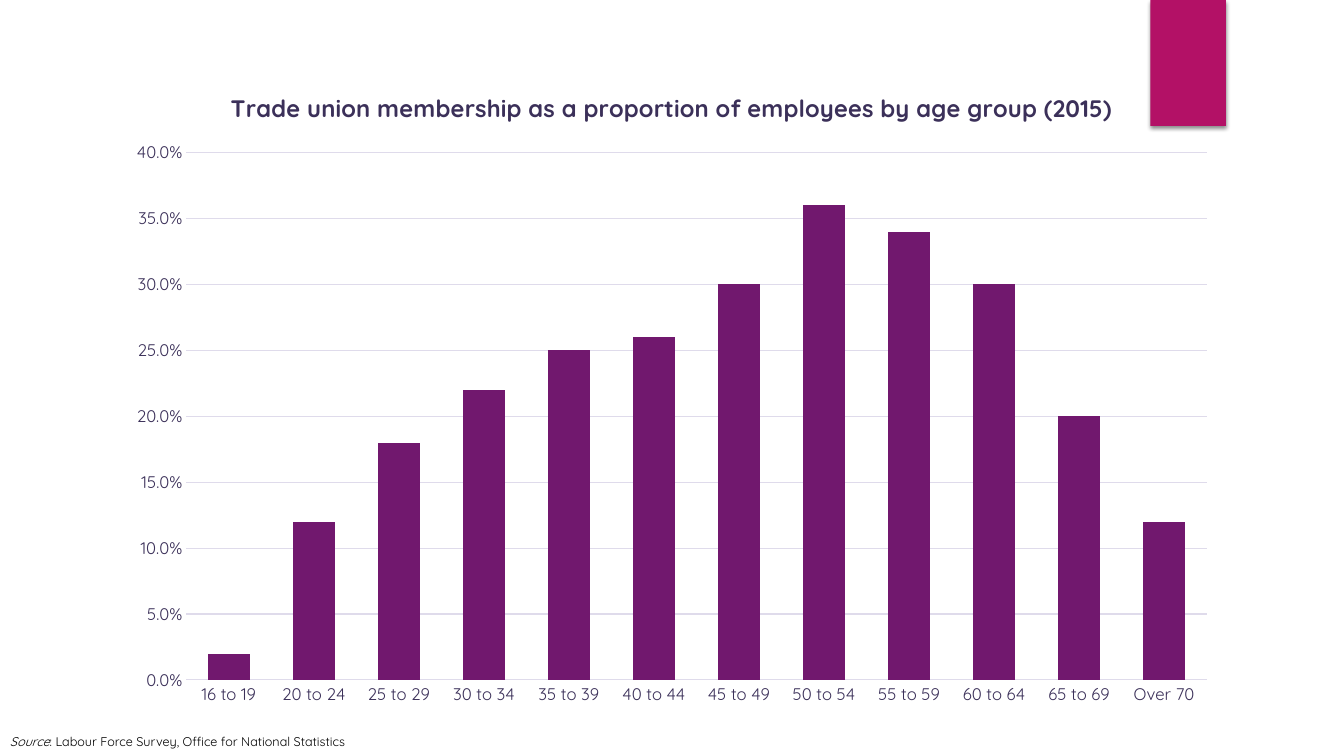
import lxml.etree
import pptx
import pptx.chart.data
import pptx.dml.color
import pptx.enum.chart
import pptx.enum.shapes
import pptx.enum.text
import pptx.oxml
import pptx.oxml.ns
import pptx.util

Inches = pptx.util.Inches
FONT = "Quicksand"
INK, GRID, BAR, ACCENT, BLACK = "3B3059", "DFDBEB", "71186E", "B31166", "000000"

TITLE = "Trade union membership as a proportion of employees by age group (2015)"
MEMBERSHIP = {
    "16 to 19": 0.02, "20 to 24": 0.12, "25 to 29": 0.18, "30 to 34": 0.22,
    "35 to 39": 0.25, "40 to 44": 0.26, "45 to 49": 0.3, "50 to 54": 0.36,
    "55 to 59": 0.34, "60 to 64": 0.3, "65 to 69": 0.2, "Over 70": 0.12,
}


def colour(hex_string):
    return pptx.dml.color.RGBColor.from_string(hex_string)


def format_font(font, size, hex_string, bold=False, italic=False):
    font.name = FONT
    font.size = pptx.util.Pt(size)
    font.color.rgb = colour(hex_string)
    font.bold = bold
    font.italic = italic


def add_text(paragraph, text, **text_format):
    run = paragraph.add_run()
    run.text = text
    format_font(run.font, **text_format)


def format_line(line, hex_string):
    line.color.rgb = colour(hex_string)
    line.width = pptx.util.Pt(0.75)


def set_layout(parent, index, inner=False, **fractions):
    """Place a chart part by fractions of the chart's width and height."""
    for existing in parent.findall(pptx.oxml.ns.qn("c:layout")):
        parent.remove(existing)
    settings = [("layoutTarget", "inner")] if inner else []
    settings += [("xMode", "edge"), ("yMode", "edge"), *fractions.items()]
    layout = lxml.etree.Element(pptx.oxml.ns.qn("c:layout"))
    manual = lxml.etree.SubElement(layout, pptx.oxml.ns.qn("c:manualLayout"))
    for name, value in settings:
        item = lxml.etree.SubElement(manual, pptx.oxml.ns.qn(f"c:{name}"))
        item.set("val", str(value))
    parent.insert(index, layout)


def add_tab(slide, left, top, width, height):
    tab = slide.shapes.add_shape(
        pptx.enum.shapes.MSO_SHAPE.RECTANGLE, left, top, width, height)
    tab.fill.solid()
    tab.fill.fore_color.rgb = colour(ACCENT)
    tab.line.fill.background()
    # Soft shadow below the tab
    tab.shadow.inherit = False
    effects = tab._element.spPr.find(pptx.oxml.ns.qn("a:effectLst"))
    effects.append(pptx.oxml.parse_xml(
        f'<a:outerShdw {pptx.oxml.ns.nsdecls("a")} blurRad="{pptx.util.Pt(3)}" '
        f'dist="{pptx.util.Pt(2)}" dir="5400000" rotWithShape="0">'
        f'<a:srgbClr val="{BLACK}"><a:alpha val="45000"/></a:srgbClr></a:outerShdw>'))


def add_membership_chart(slide, left, top, width, height):
    data = pptx.chart.data.CategoryChartData(number_format="0.0%")
    data.categories = list(MEMBERSHIP)
    data.add_series("Series 1", list(MEMBERSHIP.values()))
    chart = slide.shapes.add_chart(
        pptx.enum.chart.XL_CHART_TYPE.COLUMN_CLUSTERED,
        left, top, width, height, data).chart
    format_font(chart.font, 10, BLACK)
    chart.has_legend = False

    # Title
    chart.has_title = True
    add_text(chart.chart_title.text_frame.paragraphs[0], TITLE,
             size=17, hex_string=INK, bold=True)
    chart.chart_title.include_in_layout = False
    set_layout(chart.chart_title._element, 1, x=0.1, y=0.026)

    # Columns
    plot = chart.plots[0]
    plot.gap_width = 100
    plot.overlap = -24
    plot.vary_by_categories = False
    series_fill = plot.series[0].format.fill
    series_fill.solid()
    series_fill.fore_color.rgb = colour(BAR)
    plot_area = chart._chartSpace.chart.plotArea
    set_layout(plot_area, 0, inner=True, x=0.064, y=0.128, w=0.915, h=0.814)

    # Axes
    for axis in (chart.category_axis, chart.value_axis):
        axis.major_tick_mark = pptx.enum.chart.XL_TICK_MARK.NONE
        axis.minor_tick_mark = pptx.enum.chart.XL_TICK_MARK.NONE
        format_font(axis.tick_labels.font, 12, INK)
    format_line(chart.category_axis.format.line, GRID)
    value_axis = chart.value_axis
    value_axis.minimum_scale = 0
    value_axis.maximum_scale = 0.4
    value_axis.major_unit = 0.05
    value_axis.tick_labels.number_format = "0.0%"
    value_axis.tick_labels.number_format_is_linked = False
    value_axis.format.line.fill.background()
    format_line(value_axis.major_gridlines.format.line, GRID)


def add_source_note(slide, left, top, width, height):
    frame = slide.shapes.add_textbox(left, top, width, height).text_frame
    frame.word_wrap = False
    frame.auto_size = pptx.enum.text.MSO_AUTO_SIZE.SHAPE_TO_FIT_TEXT
    paragraph = frame.paragraphs[0]
    add_text(paragraph, "Source", size=9, hex_string=BLACK, italic=True)
    add_text(paragraph, ": Labour Force Survey, Office for National Statistics",
             size=9, hex_string=BLACK)


def main():
    presentation = pptx.Presentation()
    presentation.slide_width = Inches(13.33)
    presentation.slide_height = Inches(7.5)
    slide = presentation.slides.add_slide(presentation.slide_layouts[6])
    add_tab(slide, Inches(11.41), 0, Inches(0.75), Inches(1.25))
    add_membership_chart(slide, Inches(1.14), Inches(0.69), Inches(11.06), Inches(6.43))
    add_source_note(slide, 0, Inches(7.23), Inches(3.68), Inches(0.25))
    presentation.save("out.pptx")


if __name__ == "__main__":
    main()
